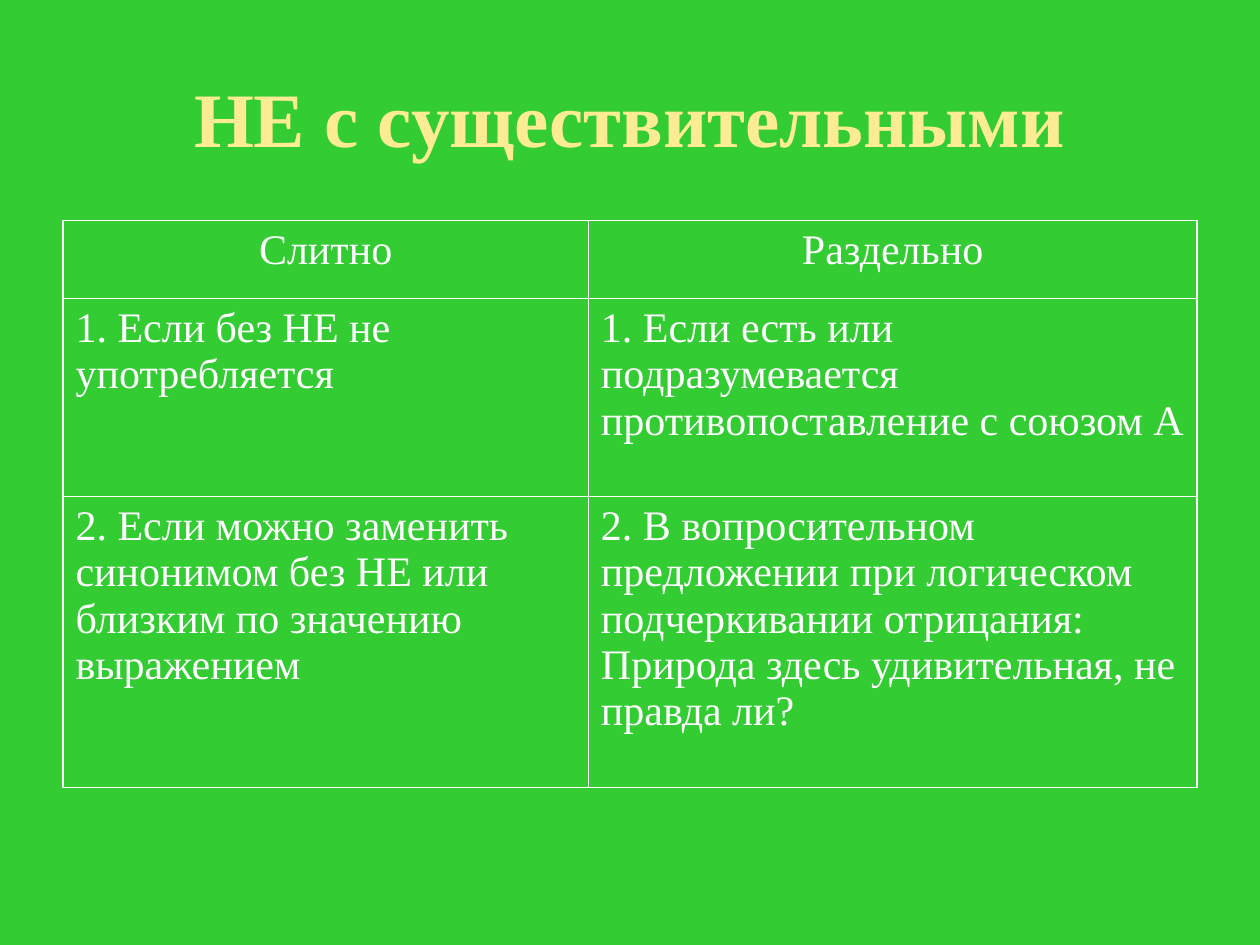
from lxml import etree
from pptx import Presentation
from pptx import util as u
from pptx.dml.color import RGBColor
from pptx.enum import text
from pptx.oxml import ns

GREEN = RGBColor(0x33, 0xCC, 0x33)
CREAM = RGBColor(0xFE, 0xEC, 0x94)
WHITE = RGBColor(0xFF, 0xFF, 0xFF)
FONT = "Times New Roman"

TITLE = "НЕ с существительными"
RULES = [
    ("Слитно", "Раздельно"),
    ("1. Если без НЕ не употребляется",
     "1. Если есть или подразумевается противопоставление с союзом А"),
    ("2. Если можно заменить синонимом без НЕ или близким по значению выражением",
     "2. В вопросительном предложении при логическом подчеркивании отрицания: "
     "Природа здесь удивительная, не правда ли?"),
]
COLUMN_WIDTHS = [u.Cm(10.59), u.Cm(12.27)]
ROW_HEIGHTS = [u.Cm(1.57), u.Cm(3.99), u.Cm(5.87)]


def format_paragraph(paragraph, size, color, alignment, bold=False):
    """Set the font and alignment of a whole paragraph."""
    paragraph.alignment = alignment
    paragraph.font.name = FONT
    paragraph.font.size = u.Pt(size)
    paragraph.font.bold = bold
    paragraph.font.color.rgb = color


def add_borders(cell, color, width):
    """Draw a solid line on all four sides of a cell."""
    properties = cell._tc.get_or_add_tcPr()
    for position, side in enumerate(("lnL", "lnR", "lnT", "lnB")):
        line = etree.Element(ns.qn(f"a:{side}"), w=str(width))
        fill = etree.SubElement(line, ns.qn("a:solidFill"))
        etree.SubElement(fill, ns.qn("a:srgbClr"), val=str(color))
        properties.insert(position, line)


def place_title(slide, left, top, width, height):
    """Fill and place the title placeholder."""
    title = slide.shapes.title
    title.left, title.top, title.width, title.height = left, top, width, height
    frame = title.text_frame
    frame.text = TITLE
    frame.word_wrap = True
    frame.vertical_anchor = text.MSO_ANCHOR.MIDDLE
    format_paragraph(frame.paragraphs[0], 44, CREAM, text.PP_ALIGN.CENTER, bold=True)


def place_rules_table(slide, left, top):
    """Add the table of spelling rules with its top left corner given."""
    table = slide.shapes.add_table(
        len(RULES), len(COLUMN_WIDTHS), left, top,
        sum(COLUMN_WIDTHS), sum(ROW_HEIGHTS)).table
    table.horz_banding = False
    table.first_row = False
    for column, width in zip(table.columns, COLUMN_WIDTHS):
        column.width = width
    for row, height, rules in zip(table.rows, ROW_HEIGHTS, RULES):
        row.height = height
        heading = rules is RULES[0]
        alignment = text.PP_ALIGN.CENTER if heading else text.PP_ALIGN.LEFT
        for cell, rule in zip(row.cells, rules):
            cell.text = rule
            cell.fill.background()
            format_paragraph(cell.text_frame.paragraphs[0], 24, WHITE, alignment)
            add_borders(cell, WHITE, u.Pt(1))


def main():
    """Build the slide and save the presentation."""
    presentation = Presentation()
    presentation.slide_width, presentation.slide_height = u.Cm(25.4), u.Cm(19.05)
    slide = presentation.slides.add_slide(presentation.slide_layouts[5])
    slide.background.fill.solid()
    slide.background.fill.fore_color.rgb = GREEN
    place_title(slide, u.Cm(1.27), u.Cm(0.76), u.Cm(22.86), u.Cm(3.18))
    place_rules_table(slide, u.Cm(1.27), u.Cm(4.45))
    presentation.save("out.pptx")


if __name__ == "__main__":
    main()
